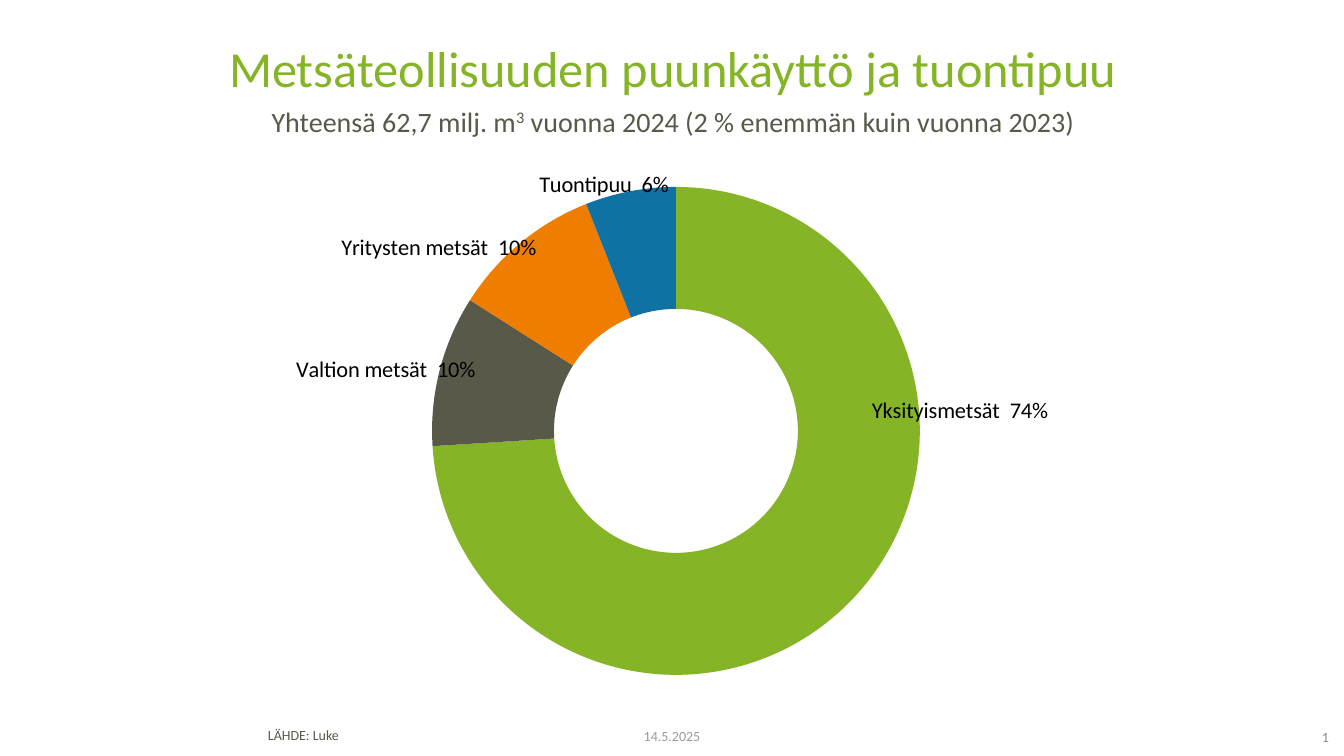
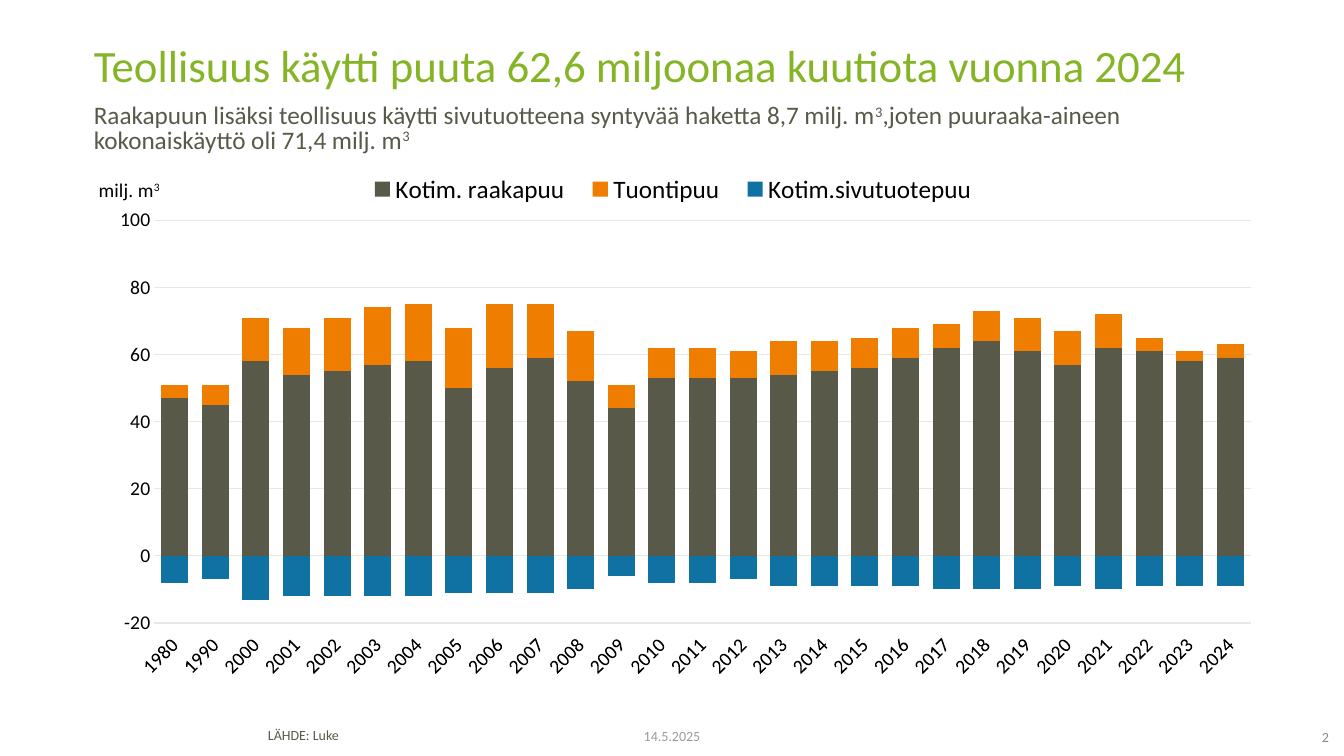
from dataclasses import dataclass

from lxml import etree
from pptx import Presentation
from pptx import util as u
from pptx.chart import data as cd
from pptx.dml.color import RGBColor
from pptx.enum import chart as ch, text as tx
from pptx.oxml import ns


@dataclass(frozen=True)
class Theme:
    font: str = "Calibri"
    green: str = "85B526"
    olive: str = "59594A"
    orange: str = "EF7D00"
    blue: str = "0F72A2"
    black: str = "000000"
    grid: str = "E7E7E3"
    date: str = "9B9B96"
    number: str = "878787"
    small: int = 10
    axis: int = 14
    label: int = 16
    legend: int = 18


T = Theme()
W, H = u.Inches(13.33), u.Inches(7.5)
LEFT, CENTER, RIGHT = tx.PP_ALIGN.LEFT, tx.PP_ALIGN.CENTER, tx.PP_ALIGN.RIGHT


def box(x, y, w, h):
    return [int(size * share / 100) for size, share in zip((W, H, W, H), (x, y, w, h))]


def set_attrs(obj, **values):
    for name, value in values.items():
        setattr(obj, name, value)


def set_font(font, size, color):
    set_attrs(font, name=T.font, size=u.Pt(size), bold=False)
    font.color.rgb = RGBColor.from_string(color)


def set_fill(fmt, color):
    fmt.fill.solid()
    fmt.fill.fore_color.rgb = RGBColor.from_string(color)


def set_line(line, color, width=0.75):
    line.color.rgb = RGBColor.from_string(color)
    line.width = u.Pt(width)


def add_runs(p, content, size, color):
    for i, part in enumerate(content.split("^")):
        r = p.add_run()
        r.text = part
        set_font(r.font, size, color)
        if i % 2:
            r.font._element.set("baseline", "30000")


def chart_el(tag, **attrs):
    el = etree.Element(ns.qn("c:" + tag))
    for name, value in attrs.items():
        el.set(name, str(value))
    return el


def set_layout(parent, index, inner=False, edge=True, **shares):
    for old in parent.findall(ns.qn("c:layout")):
        parent.remove(old)
    layout = chart_el("layout")
    manual = chart_el("manualLayout")
    layout.append(manual)
    if inner:
        manual.append(chart_el("layoutTarget", val="inner"))
    if edge:
        manual.extend(chart_el(axis + "Mode", val="edge") for axis in "xy")
    manual.extend(chart_el(name, val=value) for name, value in shares.items())
    parent.insert(index, layout)


def add_heading(s, place, title, subtitle, sizes, align):
    sp = s.shapes.title
    set_attrs(sp, **dict(zip(("left", "top", "width", "height"), place)))
    tf = sp.text_frame
    set_attrs(tf, auto_size=tx.MSO_AUTO_SIZE.NONE, word_wrap=True,
              vertical_anchor=tx.MSO_ANCHOR.TOP, margin_top=u.Inches(0.09))
    rows = zip((title, subtitle), sizes, (T.green, T.olive), (0, 10))
    for i, (content, size, color, gap) in enumerate(rows):
        p = tf.add_paragraph() if i else tf.paragraphs[0]
        set_attrs(p, alignment=align, line_spacing=0.8, space_before=u.Pt(gap))
        add_runs(p, content, size, color)


def add_note(s, place, content, color, align, **frame):
    tf = s.shapes.add_textbox(*place).text_frame
    set_attrs(tf, word_wrap=True, **frame)
    p = tf.paragraphs[0]
    p.alignment = align
    if content:
        add_runs(p, content, T.small, color)
    return p


def add_footer(s, number):
    middle = tx.MSO_ANCHOR.MIDDLE
    p = add_note(s, box(19.2, 95.73, 53.86, 3.6), "LÄHDE: Luke", T.olive, LEFT)
    p.line_spacing = 0.85
    add_note(s, box(38.75, 95.33, 22.5, 4.13), "14.5.2025", T.date, CENTER,
             vertical_anchor=middle)
    p = add_note(s, box(94.9, 96.53, 3.98, 2.53), str(number), T.number, RIGHT,
                 vertical_anchor=middle, margin_left=0, margin_right=0,
                 margin_top=0, margin_bottom=u.Inches(0.04))
    r = p.runs[0]._r
    r.tag = ns.qn("a:fld")
    r.set("id", "{B6F15528-21DE-4FAA-801E-634DDDAF4B2B}")
    r.set("type", "slidenum")


def add_chart(s, place, kind, cats, series, number_format):
    data = cd.CategoryChartData(number_format=number_format)
    data.categories = cats
    for name, values in series:
        data.add_series(name, values)
    chart = s.shapes.add_chart(kind, *place, data).chart
    set_font(chart.font, T.small, T.olive)
    return chart


def add_doughnut(s, place):
    parts = [
        ("Yksityismetsät ", 0.74, T.green, 0.2, -0.28),
        ("Valtion metsät ", 0.1, T.olive, -0.15, -0.03),
        ("Yritysten metsät ", 0.1, T.orange, -0.16, -0.08),
        ("Tuontipuu ", 0.06, T.blue, -0.05, -0.13),
    ]
    cats, values, *_ = zip(*parts)
    chart = add_chart(s, place, ch.XL_CHART_TYPE.DOUGHNUT, cats,
                      [("Series 1", values)], "0%")
    set_attrs(chart, has_legend=False, has_title=False)
    plot = chart.plots[0]
    plot.vary_by_categories = True
    root = chart.element
    root.xpath(".//c:holeSize")[0].set("val", "55")
    set_layout(root.xpath(".//c:plotArea")[0], 0, inner=True, x=0.18, y=0.03, w=0.65, h=0.94)
    points = plot.series[0].points
    for i, (_, _, color, dx, dy) in enumerate(parts):
        set_fill(points[i].format, color)
        points[i].format.line.fill.background()
        set_font(points[i].data_label.font, T.label, T.black)
        label = root.xpath(f".//c:dLbl[c:idx/@val='{i}']")[0]
        set_layout(label, 1, edge=False, x=dx, y=dy)
        label.insert(2, chart_el("numFmt", formatCode="0%", sourceLinked=0))
        label.find(ns.qn("c:showCatName")).set("val", "1")
        separator = chart_el("separator")
        separator.text = " "
        label.append(separator)


def style_axis(axis):
    none = ch.XL_TICK_MARK.NONE
    set_attrs(axis, major_tick_mark=none, minor_tick_mark=none)
    set_font(axis.tick_labels.font, T.axis, T.black)


def add_columns(s, place):
    cats = ["1980", "1990"] + [str(year) for year in range(2000, 2025)]
    series = [
        ("Kotim. raakapuu", [47, 45, 58, 54, 55, 57, 58, 50, 56, 59, 52, 44, 53, 53, 53, 54,
                             55, 56, 59, 62, 64, 61, 57, 62, 61, 58, 59]),
        ("Tuontipuu", [4, 6, 13, 14, 16, 17, 17, 18, 19, 16, 15, 7, 9, 9, 8, 10,
                       9, 9, 9, 7, 9, 10, 10, 10, 4, 3, 4]),
        ("Kotim.sivutuotepuu", [-8, -7, -13, -12, -12, -12, -12, -11, -11, -11, -10, -6, -8,
                                -8, -7, -9, -9, -9, -9, -10, -10, -10, -9, -10, -9, -9, -9]),
    ]
    chart = add_chart(s, place, ch.XL_CHART_TYPE.COLUMN_STACKED, cats, series, "#,##0")
    plot = chart.plots[0]
    set_attrs(plot, gap_width=50, overlap=100, vary_by_categories=False)
    for ser, color in zip(plot.series, (T.olive, T.orange, T.blue)):
        ser.invert_if_negative = False
        set_fill(ser.format, color)

    cat, val = chart.category_axis, chart.value_axis
    for axis in (cat, val):
        style_axis(axis)
    cat.tick_label_position = ch.XL_TICK_LABEL_POSITION.LOW
    set_line(cat.format.line, T.grid)
    set_attrs(val, minimum_scale=-20, maximum_scale=100, major_unit=20,
              has_major_gridlines=True)
    set_attrs(val.tick_labels, number_format="#,##0", number_format_is_linked=False)
    val.format.line.fill.background()
    set_line(val.major_gridlines.format.line, T.grid)

    chart.has_legend = True
    set_attrs(chart.legend, position=ch.XL_LEGEND_POSITION.TOP, include_in_layout=False)
    set_font(chart.legend.font, T.legend, T.black)
    chart.has_title = True
    title = chart.chart_title
    add_runs(title.text_frame.paragraphs[0], "milj. m^3", T.axis, T.black)
    title.include_in_layout = True

    root = chart.element
    root.xpath(".//c:catAx/c:txPr/a:bodyPr")[0].set("rot", "-2700000")
    set_layout(root.xpath(".//c:plotArea")[0], 0, inner=True, x=0.06, y=0.12, w=0.93, h=0.78)
    set_layout(root.xpath(".//c:chart/c:title")[0], 1, x=0.01, y=0.03)
    set_layout(root.xpath(".//c:legend")[0], 1, x=0.23, y=0.02, w=0.54, h=0.08)


def main():
    prs = Presentation()
    set_attrs(prs, slide_width=W, slide_height=H)
    pages = [
        ("Metsäteollisuuden puunkäyttö ja tuontipuu",
         "Yhteensä 62,7 milj. m^3^ vuonna 2024 (2 % enemmän kuin vuonna 2023)",
         (36, 20), CENTER, 13.07, add_doughnut, box(21.98, 22.67, 56.11, 68.67)),
        ("Teollisuus käytti puuta 62,6 miljoonaa kuutiota vuonna 2024",
         "Raakapuun lisäksi teollisuus käytti sivutuotteena syntyvää haketta 8,7 milj. m^3^,"
         "joten puuraaka-aineen kokonaiskäyttö oli 71,4 milj. m^3",
         (32, 18), LEFT, 15.6, add_columns, box(6.23, 20.93, 87.7, 68.8)),
    ]
    for number, (title, subtitle, sizes, align, height, draw, place) in enumerate(pages, 1):
        s = prs.slides.add_slide(prs.slide_layouts[5])
        add_heading(s, box(6.23, 5.2, 87.7, height), title, subtitle, sizes, align)
        draw(s, place)
        add_footer(s, number)
    prs.save("out.pptx")


if __name__ == "__main__":
    main()
